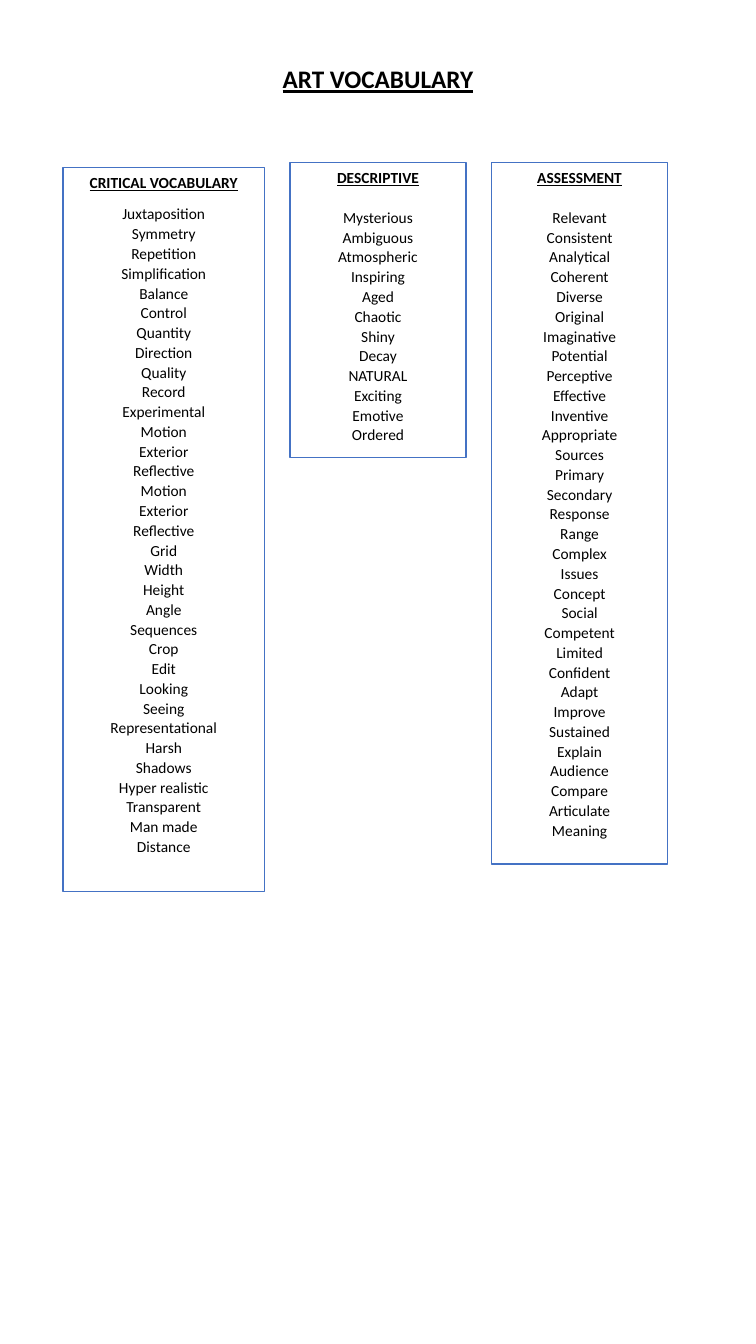
from dataclasses import dataclass

from pptx import Presentation
from pptx.dml.color import RGBColor
from pptx.enum.shapes import MSO_SHAPE
from pptx.enum.text import MSO_ANCHOR, PP_ALIGN
from pptx.util import Inches, Pt


@dataclass(frozen=True)
class Theme:
    font: str = "Calibri"
    ink: RGBColor = RGBColor(0x00, 0x00, 0x00)
    paper: RGBColor = RGBColor(0xFF, 0xFF, 0xFF)
    border: RGBColor = RGBColor(0x44, 0x72, 0xC4)
    border_width: float = 1
    title_size: float = 18
    word_size: float = 11
    line_spacing: float = 1.07


class VocabularySheet:
    unit = 0.125

    def __init__(self, slide, theme):
        self.slide = slide
        self.theme = theme

    def place(self, *cells):
        return [Inches(cell * self.unit) for cell in cells]

    def style(self, paragraph, size, heading=False, gap=0):
        paragraph.alignment = PP_ALIGN.CENTER
        paragraph.line_spacing = self.theme.line_spacing
        paragraph.space_after = Pt(gap)
        for run in paragraph.runs:
            run.font.name = self.theme.font
            run.font.size = Pt(size)
            run.font.bold = heading
            run.font.underline = heading
            run.font.color.rgb = self.theme.ink

    def title(self, text, left, top, width, height):
        title = self.slide.shapes.add_textbox(*self.place(left, top, width, height))
        title.text_frame.word_wrap = False
        title.text_frame.text = text
        self.style(title.text_frame.paragraphs[0], self.theme.title_size, heading=True)

    def word_list(self, heading, words, gap, left, top, width, height):
        panel = self.slide.shapes.add_shape(
            MSO_SHAPE.RECTANGLE, *self.place(left, top, width, height))
        panel.shadow.inherit = False
        panel.fill.solid()
        panel.fill.fore_color.rgb = self.theme.paper
        panel.line.color.rgb = self.theme.border
        panel.line.width = Pt(self.theme.border_width)
        frame = panel.text_frame
        frame.word_wrap = True
        frame.vertical_anchor = MSO_ANCHOR.TOP
        frame.text = "\n".join([heading, *words])
        heading_line, *word_lines = frame.paragraphs
        self.style(heading_line, self.theme.word_size, heading=True, gap=gap)
        for word_line in word_lines:
            self.style(word_line, self.theme.word_size)


CRITICAL = [
    "Juxtaposition", "Symmetry", "Repetition", "Simplification", "Balance",
    "Control", "Quantity", "Direction", "Quality", "Record", "Experimental",
    "Motion", "Exterior", "Reflective", "Motion", "Exterior", "Reflective",
    "Grid", "Width", "Height", "Angle", "Sequences", "Crop", "Edit", "Looking",
    "Seeing", "Representational", "Harsh", "Shadows", "Hyper realistic",
    "Transparent", "Man made", "Distance",
]
DESCRIPTIVE = [
    "Mysterious", "Ambiguous", "Atmospheric", "Inspiring", "Aged", "Chaotic",
    "Shiny", "Decay", "NATURAL", "Exciting", "Emotive", "Ordered",
]
ASSESSMENT = [
    "Relevant", "Consistent", "Analytical", "Coherent", "Diverse", "Original",
    "Imaginative", "Potential", "Perceptive", "Effective", "Inventive",
    "Appropriate", "Sources", "Primary", "Secondary", "Response", "Range",
    "Complex", "Issues", "Concept", "Social", "Competent", "Limited",
    "Confident", "Adapt", "Improve", "Sustained", "Explain", "Audience",
    "Compare", "Articulate", "Meaning",
]
FIRST_COLUMN = 5
GUTTER = 2
LISTS = [
    ("CRITICAL VOCABULARY", CRITICAL, 8, 13.28, 16, 57.44),
    ("DESCRIPTIVE", DESCRIPTIVE, 14.1, 12.88, 14, 23.44),
    ("ASSESSMENT", ASSESSMENT, 14.1, 12.88, 14, 55.68),
]


def main():
    presentation = Presentation()
    presentation.slide_width = Inches(7.5)
    presentation.slide_height = Inches(13.33)
    slide = presentation.slides.add_slide(presentation.slide_layouts[6])
    sheet = VocabularySheet(slide, Theme())

    left = FIRST_COLUMN
    for heading, words, gap, top, width, height in LISTS:
        sheet.word_list(heading, words, gap, left, top, width, height)
        left += width + GUTTER
    sheet.title("ART VOCABULARY", 21.5, 4.48, 17, 3.28)

    presentation.save("out.pptx")


if __name__ == "__main__":
    main()
